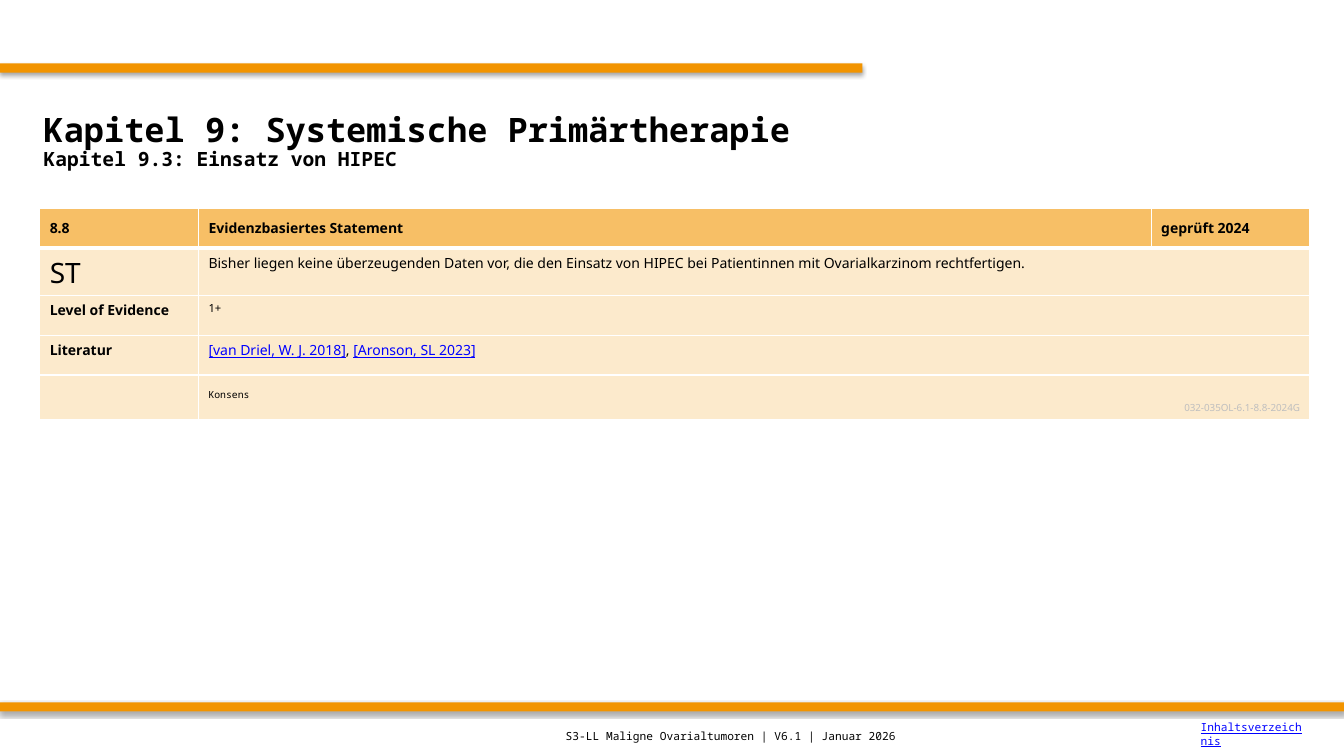
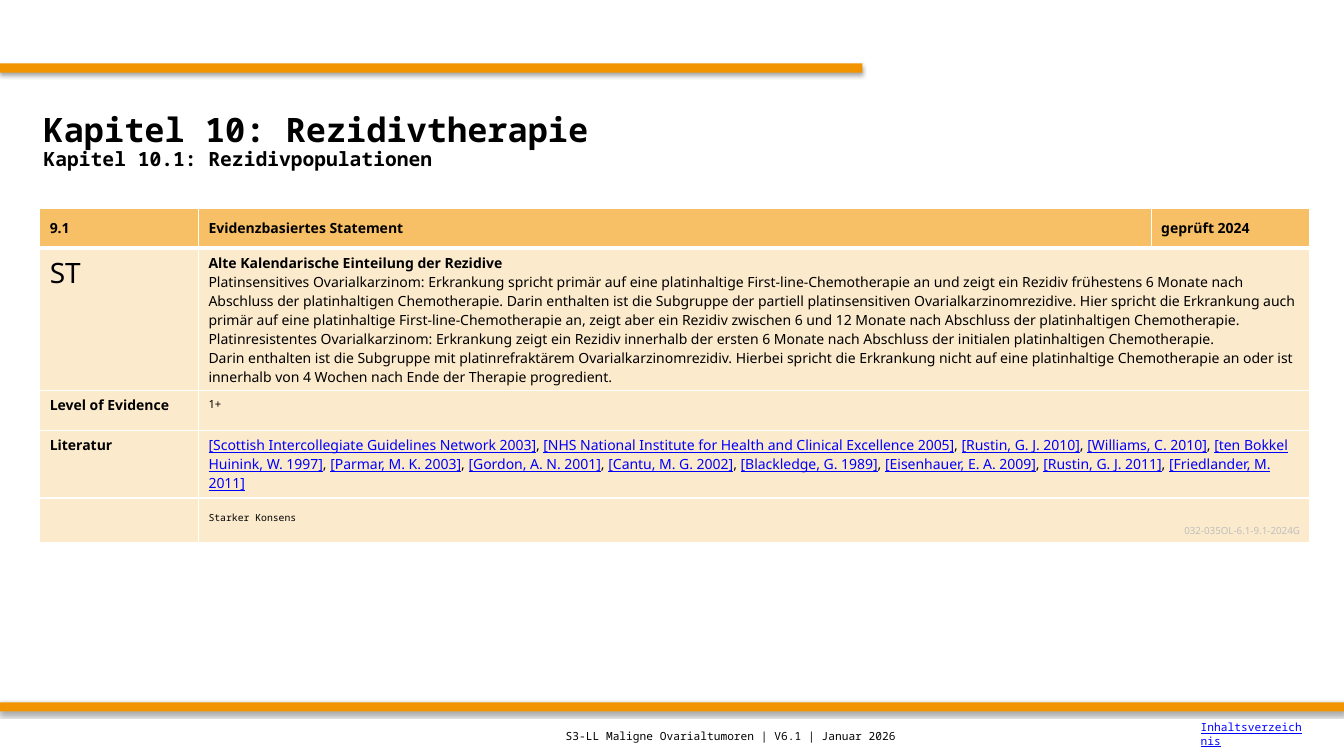
from lxml.etree import SubElement
from pptx import Presentation
from pptx.dml.color import RGBColor
from pptx.enum.shapes import MSO_SHAPE as Shape
from pptx.enum.text import MSO_ANCHOR as Anchor, PP_ALIGN as Align
from pptx.oxml.ns import qn
from pptx.util import Cm, Inches, Pt

ORANGE = RGBColor(0xF2, 0x94, 0x00)
HEADER = RGBColor(0xF7, 0xBF, 0x66)
BODY = RGBColor(0xFC, 0xEA, 0xCC)
BLACK = RGBColor(0x00, 0x00, 0x00)
WHITE = RGBColor(0xFF, 0xFF, 0xFF)
BLUE = RGBColor(0x00, 0x00, 0xFF)
GREY = RGBColor(0xBF, 0xBF, 0xBF)
SANS, MONO = "Noto Sans", "Noto Sans Mono"

GRID = Cm(1)  # one column or row of the layout grid
COLUMNS = (4, 24, 4)

STATEMENTS = [
    dict(
        title="Kapitel 9: Systemische Primärtherapie",
        subtitle="Kapitel 9.3: Einsatz von HIPEC",
        number="8.8",
        heading=None,
        text=["Bisher liegen keine überzeugenden Daten vor, die den Einsatz von HIPEC bei "
              "Patientinnen mit Ovarialkarzinom rechtfertigen."],
        sources=["van Driel, W. J. 2018", "Aronson, SL 2023"],
        consensus="Konsens",
        heights=(1, 1.2, 1, 1, 1.12),
    ),
    dict(
        title="Kapitel 10: Rezidivtherapie",
        subtitle="Kapitel 10.1: Rezidivpopulationen",
        number="9.1",
        heading="Alte Kalendarische Einteilung der Rezidive",
        text=["Platinsensitives Ovarialkarzinom: Erkrankung spricht primär auf eine platinhaltige "
              "First-line-Chemotherapie an und zeigt ein Rezidiv frühestens 6 Monate nach Abschluss "
              "der platinhaltigen Chemotherapie. Darin enthalten ist die Subgruppe der partiell "
              "platinsensitiven Ovarialkarzinomrezidive. Hier spricht die Erkrankung auch primär auf "
              "eine platinhaltige First-line-Chemotherapie an, zeigt aber ein Rezidiv zwischen 6 und "
              "12 Monate nach Abschluss der platinhaltigen Chemotherapie.",
              "Platinresistentes Ovarialkarzinom: Erkrankung zeigt ein Rezidiv innerhalb der ersten "
              "6 Monate nach Abschluss der initialen platinhaltigen Chemotherapie.",
              "Darin enthalten ist die Subgruppe mit platinrefraktärem Ovarialkarzinomrezidiv. "
              "Hierbei spricht die Erkrankung nicht auf eine platinhaltige Chemotherapie an oder ist "
              "innerhalb von 4 Wochen nach Ende der Therapie progredient."],
        sources=["Scottish Intercollegiate Guidelines Network 2003",
                 "NHS National Institute for Health and Clinical Excellence 2005",
                 "Rustin, G. J. 2010", "Williams, C. 2010", "ten Bokkel Huinink, W. 1997",
                 "Parmar, M. K. 2003", "Gordon, A. N. 2001", "Cantu, M. G. 2002",
                 "Blackledge, G. 1989", "Eisenhauer, E. A. 2009", "Rustin, G. J. 2011",
                 "Friedlander, M. 2011"],
        consensus="Starker Konsens",
        heights=(1, 3.6, 1, 1.7, 1.12),
    ),
]


def grid(*cells):
    return [int(n * GRID) for n in cells]


def run(text, size=10, font=SANS, color=BLACK, bold=False, underline=False):
    """Describe one run of text with its style."""
    return text, size, font, color, bold, underline


def reference_runs(sources):
    runs = []
    for source in sources:
        if runs:
            runs.append(run(", "))
        runs.append(run(f"[{source}]", color=BLUE, underline=True))
    return runs


def fill_text(tf, paragraphs):
    """Write paragraphs, each a list of runs, into a text frame."""
    for i, runs in enumerate(paragraphs):
        p = tf.add_paragraph() if i else tf.paragraphs[0]
        for text, size, font, color, bold, underline in runs:
            r = p.add_run()
            r.text = text
            r.font.size, r.font.name = Pt(size), font
            r.font.bold, r.font.underline = bold, underline
            r.font.color.rgb = color


def set_borders(cell, bottom):
    """Draw white cell borders; only the bottom width varies."""
    tc_pr = cell._tc.get_or_add_tcPr()
    for side, width in (("L", 1), ("R", 1), ("T", 1), ("B", bottom)):
        ln = SubElement(tc_pr, qn(f"a:ln{side}"), w=str(Pt(width)))
        SubElement(SubElement(ln, qn("a:solidFill")), qn("a:srgbClr"), val=str(WHITE))


class Deck:
    def __init__(self):
        self.prs = Presentation()
        self.prs.slide_width, self.prs.slide_height = Inches(13.33), Inches(7.5)
        self.s = None

    def add_slide(self):
        """Start a slide with its bands and footer."""
        self.s = self.prs.slides.add_slide(self.prs.slide_layouts[6])
        self.band(1.6, int(21.73 * GRID))
        self.band(17.7, self.prs.slide_width)
        self.text(14, 18.05, 14, 1,
                  [[run("S3-LL Maligne Ovarialtumoren | V6.1 | Januar 2026", 8, MONO)]])
        self.text(30, 18, 3.1, 1,
                  [[run("Inhaltsverzeichnis", 8, MONO, BLUE, underline=True)]])

    def band(self, row, width):
        top, height = grid(row, 0.23)
        sp = self.s.shapes.add_shape(Shape.RECTANGLE, 0, top, width, height)
        sp.fill.solid()
        sp.fill.fore_color.rgb = ORANGE
        sp.line.fill.background()
        sp.shadow.inherit = False
        effects = sp._element.spPr.find(qn("a:effectLst"))
        shadow = SubElement(effects, qn("a:outerShdw"), blurRad=str(Pt(3.1)),
                            dist=str(Pt(1.8)), dir="5400000", rotWithShape="0")
        color = SubElement(shadow, qn("a:srgbClr"), val=str(BLACK))
        SubElement(color, qn("a:alpha"), val="35000")

    def text(self, x, y, w, h, paragraphs):
        tf = self.s.shapes.add_textbox(*grid(x, y, w, h)).text_frame
        tf.word_wrap = True
        tf.vertical_anchor = Anchor.MIDDLE
        fill_text(tf, paragraphs)
        return tf

    def title(self, title, subtitle):
        tf = self.text(0.85, 2.1, 32.17, 2.97,
                       [[run(title, 24, MONO, bold=True)], [run(subtitle, 14, MONO, bold=True)]])
        for p in tf.paragraphs:
            p.line_spacing = 0.9

    def table(self, rows, heights):
        """Add the statement table; body rows span the last two columns."""
        frame = self.s.shapes.add_table(len(heights), len(COLUMNS),
                                        *grid(1, 5.25, sum(COLUMNS), sum(heights)))
        tbl = frame.table
        tbl.horz_banding = False
        for column, width in zip(tbl.columns, grid(*COLUMNS)):
            column.width = width
        for i, (row, height) in enumerate(zip(tbl.rows, grid(*heights))):
            row.height = height
            for cell in row.cells:
                set_borders(cell, 1 if i else 3)
                cell.fill.solid()
                cell.fill.fore_color.rgb = BODY if i else HEADER
                cell.vertical_anchor = Anchor.TOP if i else Anchor.MIDDLE
            if i:
                tbl.cell(i, 1).merge(tbl.cell(i, 2))
            for cell, paragraphs in zip(row.cells, rows[i]):
                fill_text(cell.text_frame, paragraphs)
        consensus = tbl.cell(len(heights) - 1, 1)
        consensus.vertical_anchor = Anchor.BOTTOM
        consensus.text_frame.paragraphs[-1].alignment = Align.RIGHT

    def statement(self, title, subtitle, number, heading, text, sources, consensus, heights):
        """Build one slide for an evidence-based statement."""
        self.add_slide()
        self.title(title, subtitle)
        header = (number, "Evidenzbasiertes Statement", "geprüft 2024")
        body = [[run(heading, bold=True)]] if heading else []
        body += [[run(t)] for t in text]
        self.table([
            [[[run(t, bold=True)]] for t in header],
            [[[run("ST", 20)]], body],
            [[[run("Level of Evidence", bold=True)]], [[run("1+", 8)]]],
            [[[run("Literatur", bold=True)]], [reference_runs(sources)]],
            [[], [[run(consensus, 7, MONO)],
                  [run(f"032-035OL-6.1-{number}-2024G", 7, color=GREY)]]],
        ], heights)


def main():
    deck = Deck()
    for statement in STATEMENTS:
        deck.statement(**statement)
    deck.prs.save("out.pptx")


if __name__ == "__main__":
    main()
